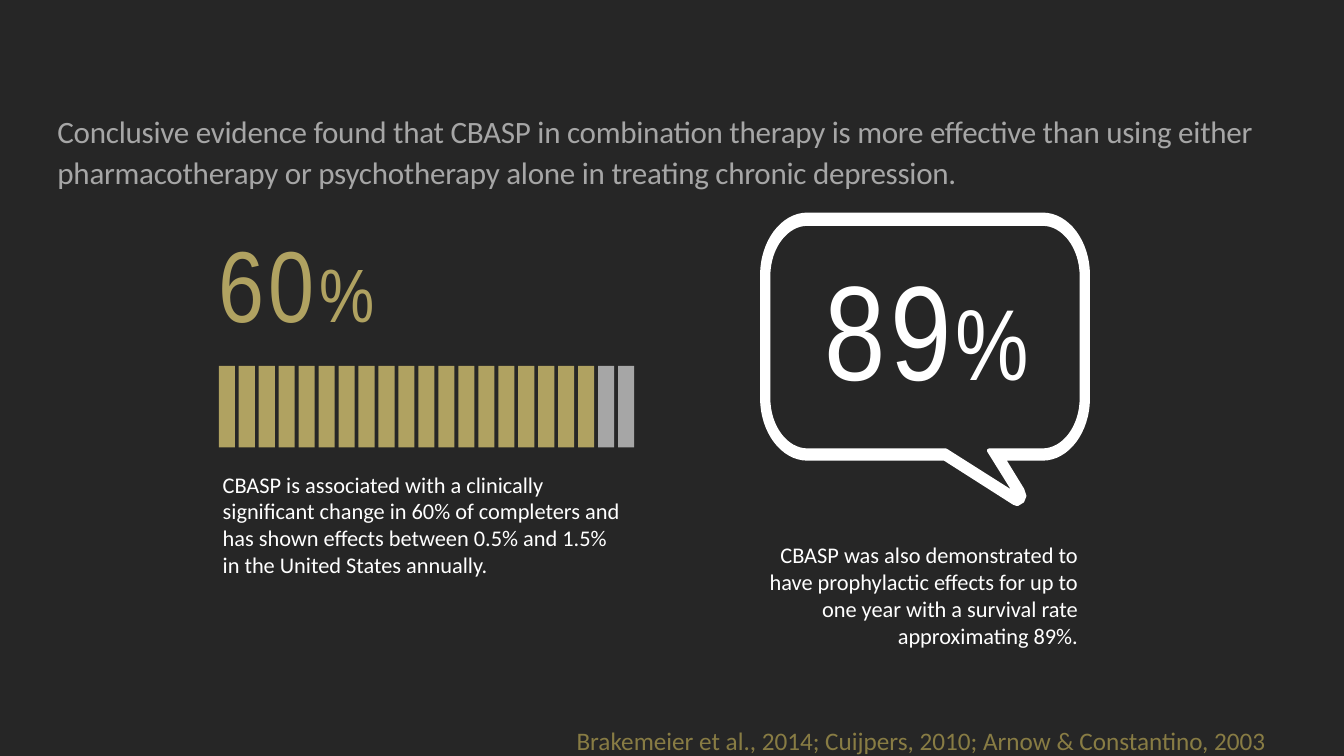
from lxml import etree
from pptx import Presentation
from pptx import util as u
from pptx.dml.color import RGBColor
from pptx.enum import shapes, text
from pptx.oxml.ns import qn

PX = 9144  # 100 px to the inch
GOLD, GREY, WHITE, DARK, OLIVE = "B0A261", "A6A6A6", "FFFFFF", "262626", "887C44"

# Content: boxes are left, top, width, height; runs are (text, points)
HEADLINE = ("Conclusive evidence found that CBASP in combination therapy is more effective "
            "than using either pharmacotherapy or psychotherapy alone in treating chronic depression.")
CHANGE = ("CBASP is associated with a clinically significant change in 60% of completers "
          "and has shown effects between 0.5% and 1.5% in the United States annually.")
SURVIVAL = ("CBASP was also demonstrated to have prophylactic effects for up to one year "
            "with a survival rate approximating 89%.")
CITATION = "Brakemeier et al., 2014; Cuijpers, 2010; Arnow & Constantino, 2003"
FIGURE = dict(font="Arial Narrow", spacing=3, middle=True, after=8)

TEXTS = [
    ((56, 103, 1218, 92), [(HEADLINE, 22.2)],
     dict(color=GREY, spacing=-0.2, insets=(1, 5, 10, 5), before=10, leading=1.1, grow=False)),
    ((207, 174, 178, 212), [("60", 72), ("%", 54)],
     dict(FIGURE, color=GOLD, insets=(10, 0, 10, 0))),
    ((211, 462, 418, 118), [(CHANGE, 16)], {}),
    ((796, 243, 247, 162), [("89", 96), ("%", 72)],
     dict(FIGURE, insets=(0, 0, 0, 0), align="CENTER")),
    ((722, 532, 357, 118), [(SURVIVAL, 16)], dict(align="RIGHT")),
    ((562, 715, 787, 71), [(CITATION, 18)], dict(color=OLIVE)),
]

# Bar strip: first bar box, left of the last bar, colours
BACKDROP = (0, 0, 1333, 750)
FIRST_BAR, LAST_LEFT = (217, 363, 16, 81), 613
BARS = [GOLD] * 19 + [GREY] * 2

# Bubble contours: left, top, right, bottom, corner radii, tail points
BUBBLE = [
    (756, 213, 1079, 455, 45, 60,
     [(995, 455), (1014, 486), (1016, 492), (1014, 497), (1009, 500), (1006, 499), (937, 455)]),
    (762, 222, 1073, 447, 39, 52, [(981, 447), (1009, 492), (938, 447)]),
]
BEND = 0.45  # distance of a curve handle from the corner, in radii


def rgb(color):
    return RGBColor.from_string(color)


def emu(*lengths):
    return [round(length * PX) for length in lengths]


def paint(shape, color):
    shape.shadow.inherit = False
    shape.fill.solid()
    shape.fill.fore_color.rgb = rgb(color)
    shape.line.fill.background()


def add_box(parent, box, color):
    paint(parent.add_shape(shapes.MSO_SHAPE.RECTANGLE, *emu(*box)), color)


def add_text(slide, box, runs, color=WHITE, font="Calibri", spacing=0, align="LEFT",
             insets=(10, 5, 10, 5), middle=False, before=0, after=0, leading=1.0, grow=True):
    frame = slide.shapes.add_textbox(*emu(*box)).text_frame
    frame.word_wrap = True
    frame.auto_size = text.MSO_AUTO_SIZE.SHAPE_TO_FIT_TEXT if grow else text.MSO_AUTO_SIZE.NONE
    frame.vertical_anchor = text.MSO_ANCHOR.MIDDLE if middle else text.MSO_ANCHOR.TOP
    (frame.margin_left, frame.margin_top,
     frame.margin_right, frame.margin_bottom) = emu(*insets)
    line = frame.paragraphs[0]
    line.alignment = text.PP_ALIGN[align]
    line.line_spacing = leading
    line.space_before, line.space_after = u.Pt(before), u.Pt(after)
    for words, size in runs:
        run = line.add_run()
        run.text = words
        run.font.name, run.font.size = font, u.Pt(size)
        run.font.color.rgb = rgb(color)
        if spacing:
            run.font._element.set("spc", str(round(spacing * 100)))


def contour(left, top, right, bottom, rx, ry, tail):
    """(point, opens a curve) pairs, clockwise from the top left."""
    pairs = []
    for x, y, dx, dy in [(left, top, rx, ry), (right, top, -rx, ry),
                         (right, bottom, -rx, -ry), (left, bottom, rx, -ry)]:
        corner = [(x, y + dy), (x, y + dy * BEND), (x + dx * BEND, y), (x + dx, y)]
        if dx * dy < 0:
            corner.reverse()
        if (x, y) == (left, bottom):
            pairs += [(point, False) for point in tail]
        pairs += [(point, index == 1) for index, point in enumerate(corner)]
    return pairs


def add_bubble(slide):
    outlines = [contour(*edge) for edge in BUBBLE]
    builder = slide.shapes.build_freeform(*emu(*outlines[0][0][0]), scale=1.0)
    for number, outline in enumerate(outlines):
        first, *rest = [emu(*point) for point, _ in outline]
        if number:
            builder.move_to(*first)
        builder.add_line_segments(rest, close=True)
    bubble = builder.convert_to_shape()
    paint(bubble, WHITE)
    bubble.line.color.rgb = rgb(WHITE)
    bubble.line.width = u.Pt(3)
    # Join each handle pair and end point into one curve
    steps = bubble._element.xpath(".//a:moveTo | .//a:lnTo")
    opens = [flag for outline in outlines for _, flag in outline]
    for index, flag in enumerate(opens):
        if flag:
            curve = etree.Element(qn("a:cubicBezTo"))
            steps[index].addprevious(curve)
            for step in steps[index:index + 3]:
                curve.append(step[0])
                step.getparent().remove(step)


prs = Presentation()
prs.slide_width, prs.slide_height = emu(1333, 750)
slide = prs.slides.add_slide(prs.slide_layouts[6])

# Dark backdrop and speech bubble
add_box(slide.shapes, BACKDROP, DARK)
add_bubble(slide)

# Bar strip
strip = slide.shapes.add_group_shape()
left, top, width, height = FIRST_BAR
pitch = (LAST_LEFT - left) / (len(BARS) - 1)
for index, color in enumerate(BARS):
    add_box(strip.shapes, (left + index * pitch, top, width, height), color)

# Texts
for box, runs, style in TEXTS:
    add_text(slide, box, runs, **style)

prs.save("out.pptx")
